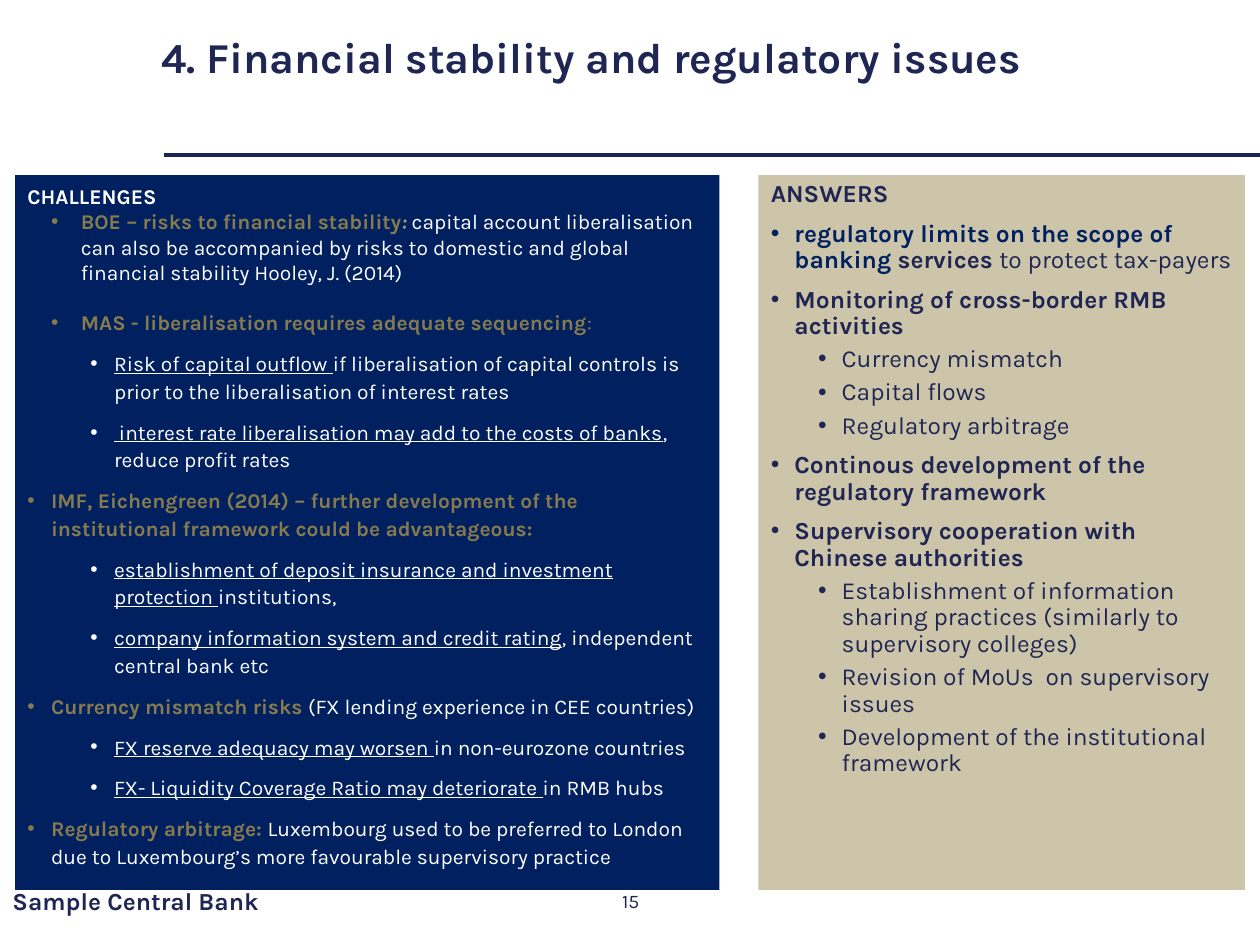
from lxml.etree import SubElement
from pptx import Presentation
from pptx.dml.color import RGBColor
from pptx.enum.shapes import MSO_CONNECTOR, MSO_SHAPE
from pptx.enum.text import MSO_ANCHOR, PP_ALIGN
from pptx.oxml.ns import qn
from pptx.util import Pt

THEME = {
    "font": "Karla",
    "ink": "202653", "rule": "1E2452", "navy": "002060", "sand": "CDC5A9",
    "gold": "877B4E", "pale gold": "AC9F70", "white": "FFFFFF",
    "title": 24.3, "challenges": 12, "answers": 14, "footer": 14, "number": 11,
}

TITLE = "4. Financial stability and regulatory issues"
ORGANISATION = "Sample Central Bank"
PAGE_NUMBER = "15"

# Each paragraph: level, then spans of (text, colour, style letters b, i, u)
CHALLENGES = [
    ("heading", ("CHALLENGES", "white", "b")),
    ("source", ("BOE – risks to financial stability", "gold", "b"),
     (": ", "pale gold", "bi"),
     ("capital account liberalisation can also be accompanied by risks to domestic "
      "and global financial stability Hooley, J. (2014)", "white", "")),
    ("next source", ("MAS - liberalisation requires adequate sequencing", "gold", "b"),
     (":", "gold", "")),
    ("detail", ("Risk of capital outflow ", "white", "u"),
     ("if liberalisation of capital controls is prior to the liberalisation of "
      "interest rates", "white", "")),
    ("detail", (" interest rate liberalisation may add to the costs of banks", "white", "u"),
     (", reduce profit rates", "white", "")),
    ("point", ("IMF, Eichengreen (2014) – further development of the institutional "
               "framework could be advantageous:", "gold", "b")),
    ("detail", ("establishment of deposit insurance and investment protection ", "white", "u"),
     ("institutions,", "white", "")),
    ("detail", ("company information system and credit rating", "white", "u"),
     (", independent central bank etc", "white", "")),
    ("point", ("Currency mismatch risks ", "gold", "b"),
     ("(FX lending experience in CEE countries)", "white", "")),
    ("detail", ("FX reserve adequacy may worsen ", "white", "u"),
     ("in non-eurozone countries", "white", "")),
    ("detail", ("FX- Liquidity Coverage Ratio may deteriorate ", "white", "u"),
     ("in RMB hubs", "white", "")),
    ("point", ("Regulatory arbitrage: ", "gold", "b"),
     ("Luxembourg used to be preferred to London due to Luxembourg’s more favourable "
      "supervisory practice", "white", "")),
]
ANSWERS = [
    ("heading", ("ANSWERS", "ink", "b")),
    ("point", ("regulatory limits on the scope of banking ", "navy", "b"),
     ("services ", "ink", "b"), ("to protect tax-payers", "ink", "")),
    ("point", ("Monitoring of cross-border RMB activities", "ink", "b")),
    ("detail", ("Currency mismatch", "ink", "")),
    ("detail", ("Capital flows", "ink", "")),
    ("detail", ("Regulatory arbitrage", "ink", "")),
    ("point", ("Continous development of the regulatory framework", "ink", "b")),
    ("point", ("Supervisory cooperation with Chinese authorities", "ink", "b")),
    ("detail", ("Establishment of information sharing practices (similarly to "
                "supervisory colleges)", "ink", "")),
    ("detail", ("Revision of MoUs  on supervisory issues", "ink", "")),
    ("detail", ("Development of the institutional framework", "ink", "")),
]

# Level: left margin, hanging indent, line spacing, space before
CHALLENGE_LEVELS = {
    "heading": (13.5, 13.5, 1.1, 0),
    "source": (30.5, 17, 1, 0),
    "next source": (30.5, 17, 1, 14.5),
    "point": (13.5, 13.5, 1.1, 7.5),
    "detail": (49.5, 13.5, 1.1, 7.5),
}
ANSWER_LEVELS = {
    "heading": (13.5, 13.5, 0.9, 0),
    "point": (13.5, 13.5, 0.9, 7.5),
    "detail": (40.5, 13.5, 0.9, 3.8),
}
PANEL_TOP, PANEL_HEIGHT = 100, 408.5
PANELS = [  # left, width, fill, type size, levels, paragraphs
    (8.6, 402.5, "navy", "challenges", CHALLENGE_LEVELS, CHALLENGES),
    (433.4, 278, "sand", "answers", ANSWER_LEVELS, ANSWERS),
]
LABELS = [  # text, left, top, width, height, type size, style, alignment
    (TITLE, 85, 11.5, 587, 42, "title", "b", PP_ALIGN.LEFT),
    (ORGANISATION, 0, 500.4, 243.4, 29, "footer", "b", PP_ALIGN.LEFT),
    (PAGE_NUMBER, 279.4, 500.4, 162, 29, "number", "", PP_ALIGN.CENTER),
]


def color(name):
    return RGBColor.from_string(THEME[name])


def write(para, spans, size):
    para.font.name = THEME["font"]
    para.font.size = Pt(THEME[size])
    for text, ink, style in spans:
        span = para.add_run()
        span.text = text
        span.font.color.rgb = color(ink)
        span.font.bold = "b" in style
        span.font.italic = "i" in style
        span.font.underline = "u" in style


def indent(para, level, margin, hang, spacing, before):
    properties = para._p.get_or_add_pPr()
    properties.set("marL", str(Pt(margin)))
    properties.set("indent", str(-Pt(hang)))
    if level != "heading":
        SubElement(properties, qn("a:buFont"), typeface="Arial")
        SubElement(properties, qn("a:buChar"), char="•")
    para.line_spacing = spacing
    para.space_before = Pt(before)
    para.alignment = PP_ALIGN.LEFT


def add_label(page, text, left, top, width, height, size, style, alignment):
    box = page.shapes.add_textbox(Pt(left), Pt(top), Pt(width), Pt(height))
    frame = box.text_frame
    frame.word_wrap = True
    frame.vertical_anchor = MSO_ANCHOR.MIDDLE
    para = frame.paragraphs[0]
    para.alignment = alignment
    write(para, [(text, "ink", style)], size)


def add_panel(page, left, width, fill, size, levels, paragraphs):
    panel = page.shapes.add_shape(MSO_SHAPE.RECTANGLE, Pt(left), Pt(PANEL_TOP),
                                  Pt(width), Pt(PANEL_HEIGHT))
    panel.shadow.inherit = False
    panel.fill.solid()
    panel.fill.fore_color.rgb = color(fill)
    panel.line.fill.background()
    frame = panel.text_frame
    frame.word_wrap = True
    frame.vertical_anchor = MSO_ANCHOR.TOP
    for index, (level, *spans) in enumerate(paragraphs):
        para = frame.add_paragraph() if index else frame.paragraphs[0]
        indent(para, level, *levels[level])
        write(para, spans, size)


def main():
    deck = Presentation()
    deck.slide_width, deck.slide_height = Pt(720), Pt(540)
    page = deck.slides.add_slide(deck.slide_layouts[6])

    # Rule under the title
    rule = page.shapes.add_connector(MSO_CONNECTOR.STRAIGHT, Pt(93.6), Pt(88.6),
                                     Pt(720), Pt(88.6))
    rule.line.color.rgb = color("rule")
    rule.line.width = Pt(2.25)
    SubElement(rule._element.spPr, qn("a:effectLst"))

    # Title, footer and page number
    for label in LABELS:
        add_label(page, *label)

    # Challenges and answers
    for panel in PANELS:
        add_panel(page, *panel)

    deck.save("out.pptx")


if __name__ == "__main__":
    main()
